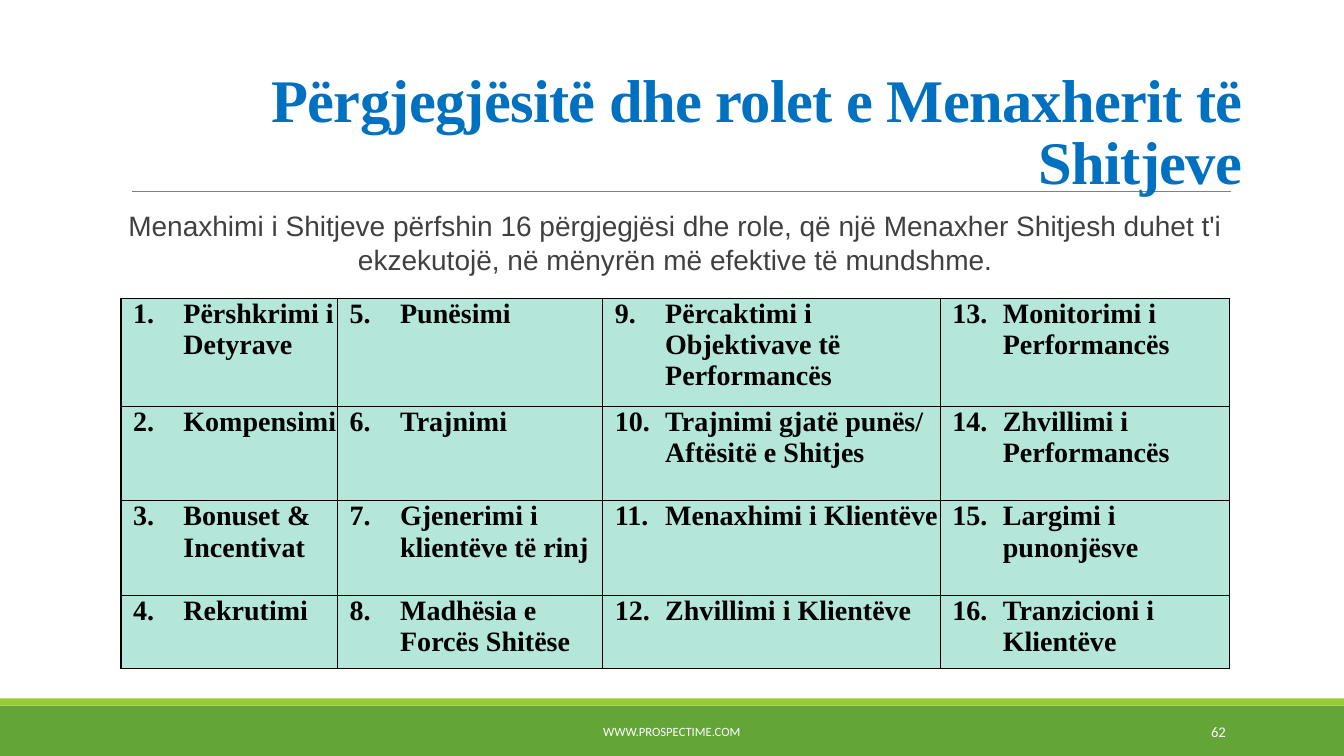
from lxml.etree import SubElement
from pptx import Presentation
from pptx.dml.color import RGBColor
from pptx.enum.shapes import MSO_CONNECTOR, MSO_SHAPE
from pptx.enum.text import MSO_ANCHOR, PP_ALIGN
from pptx.oxml.ns import qn
from pptx.util import Inches, Pt

THEME = {
    "green": "63A537", "lime": "99CB38", "rule": "808080", "title": "0070C0",
    "body": "404040", "light": "FFFFFF", "ink": "000000", "mint": "B4E6DA",
    "serif": "Times New Roman", "sans": "Arial", "small": "Calibri",
    "title_size": 43.2, "text_size": 20, "footer_size": 9, "number_size": 10.5,
}

deck = Presentation()
deck.slide_width, deck.slide_height = Inches(13.33), Inches(7.5)
page = deck.slides.add_slide(deck.slide_layouts[6])

# Grid of 160 columns by 90 rows
COLUMN, ROW = deck.slide_width / 160, deck.slide_height / 90


def grid(left, top, width, height):
    return [round(n * unit) for n, unit in
            zip((left, top, width, height), (COLUMN, ROW, COLUMN, ROW))]


def write(frame, text, *, font, size, color, align=PP_ALIGN.LEFT, bold=False,
          anchor=MSO_ANCHOR.TOP, margins=(0.1, 0.05, 0.1, 0.05), leading=None,
          after=0, tracking=None, number=None):
    frame.word_wrap = True
    frame.vertical_anchor = anchor
    (frame.margin_left, frame.margin_top,
     frame.margin_right, frame.margin_bottom) = map(Inches, margins)
    para = frame.paragraphs[0]
    para.alignment = align
    para.line_spacing = leading
    para.space_after = Pt(after)
    if number:
        props = para._p.get_or_add_pPr()
        props.set("marL", str(Inches(0.58)))
        props.set("indent", str(Inches(-0.5)))
        SubElement(props, qn("a:buFont"), typeface="+mj-lt")
        SubElement(props, qn("a:buAutoNum"), type="arabicPeriod", startAt=str(number))
    span = para.add_run()
    span.text = text
    span.font.name, span.font.size, span.font.bold = font, Pt(size), bold
    span.font.color.rgb = RGBColor.from_string(color)
    if tracking:
        span._r.get_or_add_rPr().set("spc", str(round(tracking * 100)))


# Footer bands
for top, height, color in ((84, 6, "green"), (83.16, 0.84, "lime")):
    band = page.shapes.add_shape(MSO_SHAPE.RECTANGLE, *grid(0, top, 160, height))
    band.shadow.inherit = False
    band.fill.solid()
    band.fill.fore_color.rgb = RGBColor.from_string(THEME[color])
    band.line.fill.background()

# Rule under the title
rule = page.shapes.add_connector(MSO_CONNECTOR.STRAIGHT, *grid(15.72, 22.8, 146.52, 22.8))
rule.line.color.rgb = RGBColor.from_string(THEME["rule"])
rule.line.width = Pt(0.5)
SubElement(rule._element.spPr, qn("a:effectLst"))

# Title, introduction, footer and page number
texts = (
    ((11.04, 6.6, 138, 17.4), "Përgjegjësitë dhe rolet e Menaxherit të Shitjeve",
     dict(font=THEME["serif"], size=THEME["title_size"], color=THEME["title"], bold=True,
          align=PP_ALIGN.RIGHT, anchor=MSO_ANCHOR.BOTTOM, leading=0.85, tracking=-0.5)),
    ((14.4, 24.24, 132, 10.8),
     "Menaxhimi i Shitjeve përfshin 16 përgjegjësi dhe role, që një Menaxher Shitjesh "
     "duhet t'i ekzekutojë, në mënyrën më efektive të mundshme.",
     dict(font=THEME["sans"], size=THEME["text_size"], color=THEME["body"],
          align=PP_ALIGN.CENTER, margins=(0, 0.05, 0, 0.05), after=2)),
    ((48.36, 84.72, 63.24, 4.8), "WWW.PROSPECTIME.COM",
     dict(font=THEME["small"], size=THEME["footer_size"], color=THEME["light"],
          align=PP_ALIGN.CENTER, anchor=MSO_ANCHOR.MIDDLE)),
    ((129.96, 84.72, 17.16, 4.8), "62",
     dict(font=THEME["small"], size=THEME["number_size"], color=THEME["light"],
          align=PP_ALIGN.RIGHT, anchor=MSO_ANCHOR.MIDDLE)),
)
for place, text, style in texts:
    box = page.shapes.add_textbox(*grid(*place))
    write(box.text_frame, text, **style)

# Table of roles, numbered down each column
roles = (
    ("Përshkrimi i Detyrave", "Kompensimi", "Bonuset & Incentivat", "Rekrutimi"),
    ("Punësimi", "Trajnimi", "Gjenerimi i klientëve të rinj", "Madhësia e Forcës Shitëse"),
    ("Përcaktimi i Objektivave të Performancës", "Trajnimi gjatë punës/ Aftësitë e Shitjes",
     "Menaxhimi i Klientëve", "Zhvillimi i Klientëve"),
    ("Monitorimi i Performancës", "Zhvillimi i Performancës", "Largimi i punonjësve",
     "Tranzicioni i Klientëve"),
)
widths = (25.8, 31.56, 40.2, 34.44)
heights = (12.84, 11.28, 11.28, 8.64)
table = page.shapes.add_table(
    len(heights), len(widths), *grid(14.4, 35.52, sum(widths), sum(heights))).table
for column, width in zip(table.columns, widths):
    column.width = round(width * COLUMN)
for row, height in zip(table.rows, heights):
    row.height = round(height * ROW)

for across, names in enumerate(roles):
    for down, name in enumerate(names):
        cell = table.cell(down, across)
        write(cell.text_frame, name, font=THEME["serif"], size=THEME["text_size"],
              color=THEME["ink"], bold=True, number=across * len(names) + down + 1)
        cell.margin_left = Inches(0.04)
        cell.margin_top = cell.margin_right = cell.margin_bottom = 0
        cell.vertical_anchor = MSO_ANCHOR.TOP
        props = cell._tc.get_or_add_tcPr()
        for side in ("a:lnL", "a:lnR", "a:lnT", "a:lnB"):
            border = SubElement(props, qn(side), w=str(Pt(1)))
            SubElement(SubElement(border, qn("a:solidFill")), qn("a:srgbClr"), val=THEME["ink"])
        cell.fill.solid()
        cell.fill.fore_color.rgb = RGBColor.from_string(THEME["mint"])

deck.save("out.pptx")
